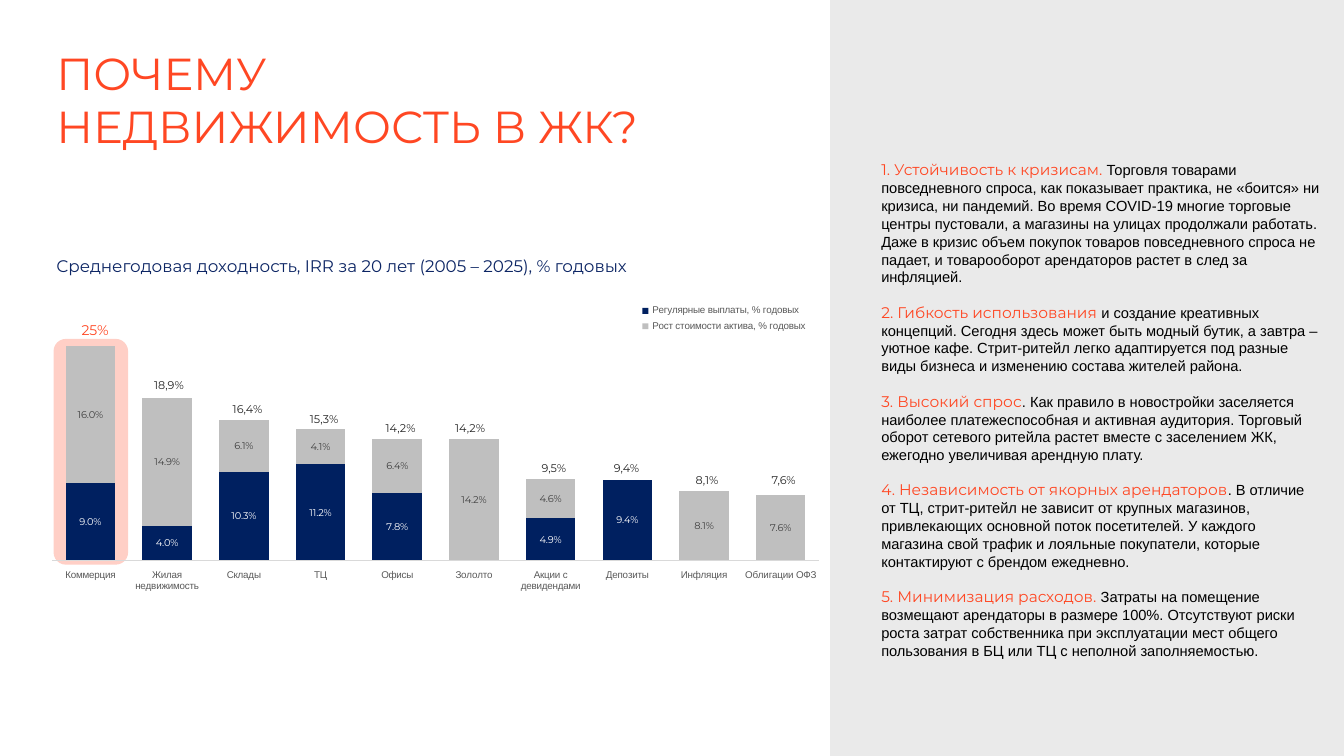
from lxml import etree
from pptx import Presentation
from pptx.chart.data import CategoryChartData
from pptx.dml.color import RGBColor
from pptx.enum.chart import (XL_CHART_TYPE, XL_LABEL_POSITION, XL_LEGEND_POSITION,
                             XL_TICK_LABEL_POSITION, XL_TICK_MARK)
from pptx.enum.shapes import MSO_SHAPE
from pptx.enum.text import PP_ALIGN
from pptx.oxml import parse_xml
from pptx.oxml.ns import nsdecls, qn
from pptx.util import Cm, Pt

STACKED = XL_CHART_TYPE.COLUMN_STACKED
LABEL_CENTER = XL_LABEL_POSITION.CENTER
LEGEND_BOTTOM = XL_LEGEND_POSITION.BOTTOM
LABELS_LOW = XL_TICK_LABEL_POSITION.LOW
NO_TICKS = XL_TICK_MARK.NONE
RECTANGLE = MSO_SHAPE.RECTANGLE
ROUNDED = MSO_SHAPE.ROUNDED_RECTANGLE
LEFT, CENTER = PP_ALIGN.LEFT, PP_ALIGN.CENTER

ORANGE = RGBColor(0xFF, 0x47, 0x23)
NAVY = RGBColor(0x00, 0x20, 0x60)
HEADING_BLUE = RGBColor(0x0C, 0x25, 0x64)
SILVER = RGBColor(0xBF, 0xBF, 0xBF)
PANEL_GREY = RGBColor(0xEA, 0xEA, 0xEA)
AXIS_GREY = RGBColor(0xD9, 0xD9, 0xD9)
CAPTION_GREY = RGBColor(0x59, 0x59, 0x59)
VALUE_GREY = RGBColor(0x40, 0x40, 0x40)
TOTAL_GREY = RGBColor(0x26, 0x26, 0x26)
WHITE = RGBColor(0xFF, 0xFF, 0xFF)
BLACK = RGBColor(0x00, 0x00, 0x00)

BODY_PITCH = Pt(12.7)

# Asset, regular payments, growth, total, total's left and top in the chart box (cm)
ASSETS = [
    ("Коммерция", 0.09, 0.16, "25%", 1.24, 0.89),
    ("Жилая недвижимость", 0.04, 0.149, "18,9%", 3.1, 2.31),
    ("Склады", 0.103, 0.061, "16,4%", 5.08, 2.92),
    ("ТЦ", 0.112, 0.041, "15,3%", 7.01, 3.18),
    ("Офисы", 0.078, 0.064, "14,2%", 8.94, 3.4),
    ("Зололто", None, 0.142, "14,2%", 10.69, 3.4),
    ("Акции с девидендами", 0.049, 0.046, "9,5%", 12.8, 4.42),
    ("Депозиты", 0.094, None, "9,4%", 14.63, 4.42),
    ("Инфляция", None, 0.081, "8,1%", 16.66, 4.72),
    ("Облигации ОФЗ", None, 0.076, "7,6%", 18.59, 4.72),
]

REASONS = [
    ("1. Устойчивость к кризисам. ",
     "Торговля товарами повседневного спроса, как показывает практика, не «боится» ни кризиса, "
     "ни пандемий. Во время COVID-19 многие торговые центры пустовали, а магазины на улицах "
     "продолжали работать. Даже в кризис объем покупок товаров повседневного спроса не падает, "
     "и товарооборот арендаторов растет в след за инфляцией."),
    ("2. Гибкость использования ",
     "и создание креативных концепций. Сегодня здесь может быть модный бутик, а завтра – уютное "
     "кафе. Стрит-ритейл легко адаптируется под разные виды бизнеса и изменению состава жителей "
     "района."),
    ("3. Высокий спрос",
     ". Как правило в новостройки заселяется наиболее платежеспособная и активная аудитория. "
     "Торговый оборот сетевого ритейла растет вместе с заселением ЖК, ежегодно увеличивая "
     "арендную плату."),
    ("4. Независимость от якорных арендаторов",
     ". В отличие от ТЦ, стрит-ритейл не зависит от крупных магазинов, привлекающих основной "
     "поток посетителей. У каждого магазина свой трафик и лояльные покупатели, которые "
     "контактируют с брендом ежедневно."),
    ("5. Минимизация расходов. ",
     "Затраты на помещение возмещают арендаторы в размере 100%. Отсутствуют риски роста затрат "
     "собственника при эксплуатации мест общего пользования в БЦ или ТЦ с неполной "
     "заполняемостью."),
]


def style_font(font, size, color, name):
    font.size, font.name = Pt(size), name
    font.color.rgb = color


def add_block(slide, shape_type, box, color):
    block = slide.shapes.add_shape(shape_type, *box)
    block.shadow.inherit = False
    block.fill.solid()
    block.fill.fore_color.rgb = color
    block.line.fill.background()
    return block


def add_text(slide, box, lines, size, color, align=LEFT):
    frame = slide.shapes.add_textbox(*box).text_frame
    frame.word_wrap = True
    frame.text = "\n".join(lines)
    for paragraph in frame.paragraphs:
        paragraph.alignment = align
        style_font(paragraph.runs[0].font, size, color, "Montserrat")


def set_layout(parent, x, y, w, h, target=""):
    """Place a chart part by fractions of the chart area."""
    for old in parent.findall(qn("c:layout")):
        parent.remove(old)
    layout = parse_xml(
        f'<c:layout {nsdecls("c")}><c:manualLayout>{target}'
        '<c:xMode val="edge"/><c:yMode val="edge"/>'
        f'<c:x val="{x}"/><c:y val="{y}"/><c:w val="{w}"/><c:h val="{h}"/>'
        '</c:manualLayout></c:layout>')
    before = parent.find(qn("c:legendPos"))
    if before is None:
        parent.insert(0, layout)
    else:
        before.addnext(layout)


def add_yield_chart(slide, left, top, width, height):
    # Highlight behind the first column
    highlight = add_block(slide, ROUNDED, (left + Cm(0.94), top + Cm(1.45), Cm(1.88), Cm(5.69)), ORANGE)
    tint = highlight.fill._xPr.find(qn("a:solidFill"))[0]
    etree.SubElement(tint, qn("a:alpha")).set("val", "26000")

    # Stacked columns
    names, payments, growth = zip(*(asset[:3] for asset in ASSETS))
    data = CategoryChartData(number_format="0.0%")
    data.categories = names
    data.add_series("Регулярные выплаты, % годовых", payments)
    data.add_series("Рост стоимости актива, % годовых", growth)
    chart = slide.shapes.add_chart(STACKED, left, top, width, height, data).chart
    chart.has_title = False
    style_font(chart.font, 10, BLACK, "Roboto")
    columns = chart.plots[0]
    columns.gap_width, columns.overlap = 55, 100
    columns.vary_by_categories = False
    for series, fill, ink in zip(columns.series, (NAVY, SILVER), (WHITE, VALUE_GREY)):
        series.format.fill.solid()
        series.format.fill.fore_color.rgb = fill
        labels = series.data_labels
        labels.show_value = True
        labels.number_format, labels.number_format_is_linked = "0.0%", False
        labels.position = LABEL_CENTER
        style_font(labels.font, 7, ink, "Montserrat")

    # Axes
    assets_axis, yield_axis = chart.category_axis, chart.value_axis
    assets_axis.tick_label_position = LABELS_LOW
    assets_axis.major_tick_mark = assets_axis.minor_tick_mark = NO_TICKS
    assets_axis.format.line.color.rgb = AXIS_GREY
    assets_axis.format.line.width = Pt(0.75)
    style_font(assets_axis.tick_labels.font, 7, CAPTION_GREY, "Arial")
    yield_axis.minimum_scale, yield_axis.maximum_scale = 0, 0.3
    yield_axis.has_major_gridlines = False
    yield_axis.visible = False

    # Legend, plot area and clear background
    chart.has_legend = True
    chart.legend.position = LEGEND_BOTTOM
    chart.legend.include_in_layout = False
    style_font(chart.legend.font, 7, CAPTION_GREY, "Arial")
    set_layout(chart.legend._element, 0.76, 0.06, 0.22, 0.11)
    chart_xml = chart._chartSpace.find(qn("c:chart"))
    set_layout(chart_xml.find(qn("c:plotArea")), 0.044, 0.067, 0.943, 0.796,
               '<c:layoutTarget val="inner"/>')
    chart_xml.addnext(parse_xml(f'<c:spPr {nsdecls("c", "a")}><a:noFill/><a:ln><a:noFill/></a:ln></c:spPr>'))

    # Totals above the columns
    for index, (*_, total, x, y) in enumerate(ASSETS):
        size, color = (8, TOTAL_GREY) if index else (10, ORANGE)
        add_text(slide, (left + Cm(x), top + Cm(y), Cm(1.5), Cm(0.61)), [total], size, color, CENTER)


def add_reasons_panel(slide, left, top, width, height):
    add_block(slide, RECTANGLE, (left, top, width, height), PANEL_GREY)
    frame = slide.shapes.add_textbox(left + Cm(1.04), top + Cm(3.94), Cm(11.58), Cm(12.85)).text_frame
    frame.word_wrap = True
    for index, (heading, explanation) in enumerate(REASONS):
        paragraph = frame.add_paragraph() if index else frame.paragraphs[0]
        paragraph.line_spacing = BODY_PITCH
        if index:
            paragraph.space_before = BODY_PITCH
        paragraph.text = heading
        style_font(paragraph.runs[0].font, 11, ORANGE, "Montserrat")
        body = paragraph.add_run()
        body.text = explanation
        style_font(body.font, 10.5, BLACK, "Arial")


def main():
    deck = Presentation()
    deck.slide_width, deck.slide_height = Cm(33.87), Cm(19.05)
    slide = deck.slides.add_slide(deck.slide_layouts[6])
    add_reasons_panel(slide, Cm(20.92), 0, Cm(12.95), deck.slide_height)
    add_text(slide, (Cm(1.17), Cm(1.02), Cm(17.07), Cm(3.84)),
             ["ПОЧЕМУ", "НЕДВИЖИМОСТЬ В ЖК?"], 32, ORANGE)
    add_text(slide, (Cm(1.17), Cm(6.32), Cm(16.66), Cm(0.76)),
             ["Среднегодовая доходность, IRR за 20 лет (2005 – 2025), % годовых"], 12, HEADING_BLUE)
    add_yield_chart(slide, Cm(0.41), Cm(7.09), Cm(20.5), Cm(8.15))
    deck.save("out.pptx")


if __name__ == "__main__":
    main()
